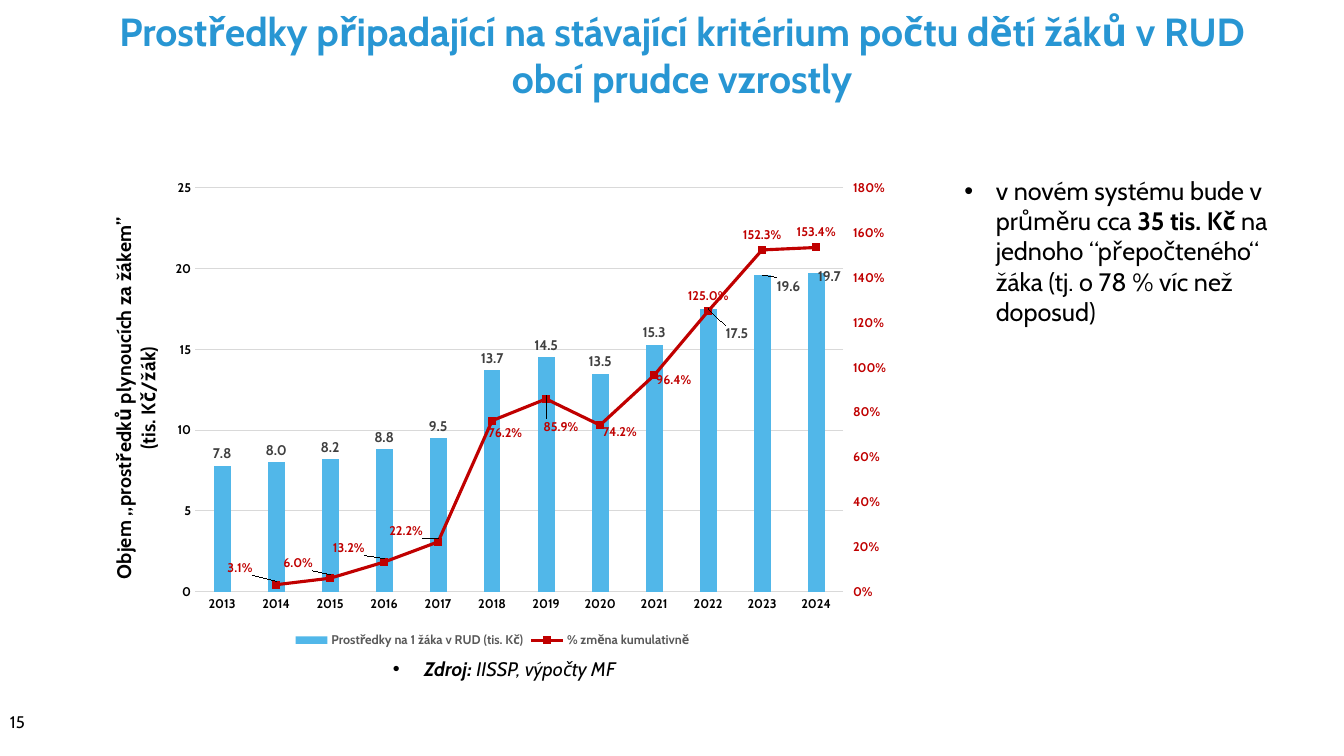
"""Build the slide on RUD funds per pupil with a combined column and line chart."""
import copy

import pptx
import pptx.chart.axis
import pptx.chart.data
import pptx.dml.color
import pptx.enum.chart
import pptx.enum.text
import pptx.oxml
import pptx.oxml.ns
import pptx.util

COLORS = {"title": "2896D3", "text": "000000", "bar": "51B7E9", "line": "C00000",
          "label": "404040", "legend": "595959", "grid": "D9D9D9"}
RGB = {name: pptx.dml.color.RGBColor.from_string(c) for name, c in COLORS.items()}
NS = pptx.oxml.ns.nsdecls("c")
qn = pptx.oxml.ns.qn
Cm = pptx.util.Cm


def put(target, text=None, size=9, color="text", bold=False, italic=False):
    if text:
        target = target.add_run()
        target.text = text
    f = target.font
    f.name, f.size, f.bold, f.italic = "Cabin", pptx.util.Pt(size), bold, italic
    f.color.rgb = RGB[color]


def layout(edge=False, **values):
    modes = '<c:xMode val="edge"/><c:yMode val="edge"/>' if edge else ""
    target = '<c:layoutTarget val="inner"/>' if "w" in values else ""
    sizes = "".join(f'<c:{k} val="{v:.4f}"/>' for k, v in values.items())
    return pptx.oxml.parse_xml(
        f"<c:layout {NS}><c:manualLayout>{target}{modes}{sizes}</c:manualLayout></c:layout>")


prs = pptx.Presentation()
prs.slide_width, prs.slide_height = Cm(33.87), Cm(19.05)
s = prs.slides.add_slide(prs.slide_layouts[1])

title, body = s.placeholders
title.left, title.top, title.width, title.height = Cm(2.06), Cm(0), Cm(30), Cm(2.74)
tf = title.text_frame
tf.auto_size = pptx.enum.text.MSO_AUTO_SIZE.NONE
tf.vertical_anchor = pptx.enum.text.MSO_ANCHOR.MIDDLE
tf.margin_left = Cm(0.51)
p = tf.paragraphs[0]
p.alignment = pptx.enum.text.PP_ALIGN.CENTER
put(p, "Prostředky připadající na stávající kritérium počtu dětí žáků v RUD obcí prudce vzrostly",
    size=28, color="title", bold=True)

funds = [7.8, 8.0, 8.2, 8.8, 9.5, 13.7, 14.5, 13.5, 15.3, 17.5, 19.6, 19.7]
change = [None, 0.031, 0.06, 0.132, 0.222, 0.762, 0.859, 0.742, 0.964, 1.25, 1.523, 1.534]
cd = pptx.chart.data.CategoryChartData()
cd.categories = [str(year) for year in range(2013, 2025)]
cd.add_series("Prostředky na 1 žáka v RUD (tis. Kč)", funds, "0.0")
cd.add_series("% změna kumulativně", change, "0.0%")
chart = s.shapes.add_chart(pptx.enum.chart.XL_CHART_TYPE.COLUMN_CLUSTERED,
                           Cm(2.06), Cm(4.29), Cm(20.7), Cm(12.14), cd).chart
put(chart, size=10)
chart.has_title = False
chart.has_legend = True
chart.legend.position = pptx.enum.chart.XL_LEGEND_POSITION.BOTTOM
chart.legend.include_in_layout = False
put(chart.legend, color="legend", bold=True)

cat_axis, val_axis = chart.category_axis, chart.value_axis
bar_plot = chart.plots[0]
bar_plot.gap_width = 219
bar_plot.vary_by_categories = False
area = chart.element.find(".//" + qn("c:plotArea"))
bar_chart = area.find(qn("c:barChart"))
line_chart = pptx.oxml.parse_xml(
    f'<c:lineChart {NS}><c:grouping val="standard"/><c:varyColors val="0"/>'
    '<c:marker val="1"/><c:axId val="5001"/><c:axId val="5002"/></c:lineChart>')
line_ser = bar_chart.findall(qn("c:ser"))[1]
for flag in line_ser.findall(qn("c:invertIfNegative")):
    line_ser.remove(flag)
line_chart.insert(2, line_ser)
bar_chart.addnext(line_chart)

cat_element, val_element = cat_axis._element, val_axis._element
right_cat, right_val = copy.deepcopy(cat_element), copy.deepcopy(val_element)
for ax, own, other in ((right_cat, "5001", "5002"), (right_val, "5002", "5001")):
    ax.find(qn("c:axId")).set("val", own)
    ax.find(qn("c:crossAx")).set("val", other)
right_val.find(qn("c:axPos")).set("val", "r")
right_val.find(qn("c:crosses")).set("val", "max")
val_element.addnext(right_val)
right_val.addnext(right_cat)
pptx.chart.axis.CategoryAxis(right_cat).visible = False
right_axis = pptx.chart.axis.ValueAxis(right_val)

TICK = pptx.enum.chart.XL_TICK_MARK
for axis, top, step, number, color, tick in (
        (val_axis, 25, 5, "0", "text", TICK.NONE),
        (right_axis, 1.8, 0.2, "0%", "line", TICK.OUTSIDE)):
    axis.minimum_scale, axis.maximum_scale, axis.major_unit = 0, top, step
    axis.major_tick_mark = tick
    axis.tick_labels.number_format = number
    axis.tick_labels.number_format_is_linked = False
    put(axis.tick_labels, color=color, bold=True)
    axis.format.line.fill.background()
right_axis.has_major_gridlines = False
cat_axis.major_tick_mark = TICK.NONE
put(cat_axis.tick_labels, bold=True)
for line in (cat_axis.format.line, val_axis.major_gridlines.format.line):
    line.color.rgb = RGB["grid"]
    line.width = pptx.util.Pt(0.75)

tf = val_axis.axis_title.text_frame
put(tf.paragraphs[0], "Objem „prostředků plynoucích za žákem” (tis. Kč/žák)", size=14, bold=True)
body_pr = tf._txBody.find(qn("a:bodyPr"))
body_pr.set("rot", "-5400000")
body_pr.set("vert", "horz")
for parent, index, place in (
        (val_axis.axis_title._element, 1, dict(x=0.03, y=0.09)),
        (area, 0, dict(x=0.138, y=0.0365, w=0.789, h=0.8385))):
    for old in parent.findall(qn("c:layout")):
        parent.remove(old)
    parent.insert(index, layout(edge=True, **place))

bars, changes = bar_plot.series[0], chart.plots[1].series[0]
bars.format.fill.solid()
bars.format.fill.fore_color.rgb = RGB["bar"]
changes.smooth = False
changes.format.line.color.rgb = RGB["line"]
changes.format.line.width = pptx.util.Pt(2.25)
changes.marker.style = pptx.enum.chart.XL_MARKER_STYLE.SQUARE
changes.marker.size = 5
changes.marker.format.fill.solid()
changes.marker.format.fill.fore_color.rgb = RGB["line"]
changes.marker.format.line.color.rgb = RGB["line"]

POS = pptx.enum.chart.XL_LABEL_POSITION
bar_shifts = {9: (0.035, 0.077), 10: (0.032, 0.048), 11: (0.016, 0.031)}
line_shifts = {1: (-0.044, -0.004), 2: (-0.039, 0), 3: (-0.043, 0.002), 4: (-0.039, 0.008),
               5: (0.016, 0.056), 6: (0.018, 0.089), 7: (0.024, 0.046), 8: (0.024, 0.042)}
for series, number, size, color, pos, shifts in (
        (bars, "0.0", 10, "label", POS.OUTSIDE_END, bar_shifts),
        (changes, "0.0%", 9, "line", POS.ABOVE, line_shifts)):
    labels = series.data_labels
    labels.show_value = True
    labels.number_format = number
    labels.number_format_is_linked = False
    labels.position = pos
    put(labels, size=size, color=color, bold=True)
    for i, (dx, dy) in shifts.items():
        label = series.points[i].data_label
        label.position = pos
        put(label, size=size, color=color, bold=True)
        idx = labels._element.find(f'{qn("c:dLbl")}/{qn("c:idx")}[@val="{i}"]')
        idx.addnext(pptx.oxml.parse_xml(
            f'<c:numFmt {NS} formatCode="{number}" sourceLinked="0"/>'))
        idx.addnext(layout(x=dx, y=dy))

number = s.shapes.add_textbox(Cm(0), Cm(17.65), Cm(1.22), Cm(1.09))
number.text_frame.word_wrap = True
number.text_frame.vertical_anchor = pptx.enum.text.MSO_ANCHOR.MIDDLE
put(number.text_frame.paragraphs[0], "15", size=12)

source = s.shapes.add_textbox(Cm(9.65), Cm(16.43), Cm(6.43), Cm(0.86))
source.text_frame.word_wrap = False
body.left, body.top, body.width, body.height = Cm(24.05), Cm(4.29), Cm(9.19), Cm(4.88)
body.text_frame.auto_size = pptx.enum.text.MSO_AUTO_SIZE.NONE
for sp, size, runs in (
        (source, 14, [("Zdroj: ", True, True), ("IISSP, výpočty MF", False, True)]),
        (body, 18, [("v novém systému bude v průměru cca ", False, False),
                    ("35 tis. Kč ", True, False),
                    ("na jednoho “přepočteného“ žáka (tj. o 78 % víc než doposud)", False, False)])):
    p = sp.text_frame.paragraphs[0]
    p.space_before = pptx.util.Pt(0)
    pr = p._p.get_or_add_pPr()
    pr.set("marL", str(Cm(0.79)))
    pr.set("indent", str(-Cm(0.79)))
    for bullet in ('<a:buFont {} typeface="Arial"/>', '<a:buChar {} char="•"/>'):
        pr.append(pptx.oxml.parse_xml(bullet.format(pptx.oxml.ns.nsdecls("a"))))
    for text, bold, italic in runs:
        put(p, text, size=size, bold=bold, italic=italic)

prs.save("out.pptx")
